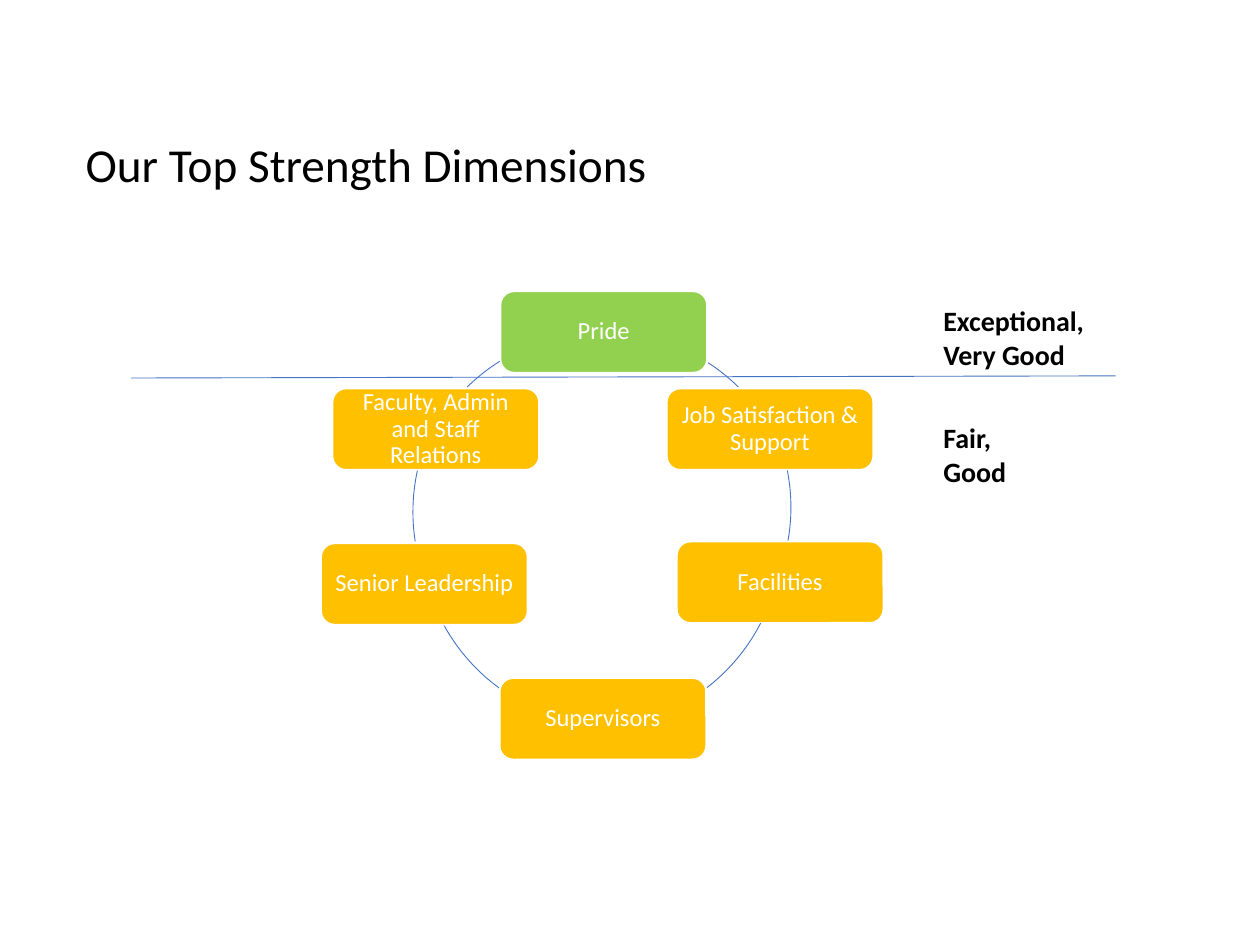
from dataclasses import dataclass
from lxml.etree import SubElement as Sub
from pptx import Presentation as Deck
from pptx.dml.color import RGBColor as RGB
from pptx.enum.shapes import MSO_CONNECTOR as Conn, MSO_SHAPE as Kind
from pptx.enum.text import MSO_ANCHOR as Anchor, MSO_AUTO_SIZE as Fit, PP_ALIGN as Align
from pptx.oxml.ns import qn
from pptx.util import Pt


@dataclass(frozen=True)
class Theme:
    font: str = "Calibri"
    ink: RGB = RGB(0, 0, 0)
    pale: RGB = RGB(255, 255, 255)
    green: RGB = RGB(0x92, 0xD0, 0x50)
    gold: RGB = RGB(0xFF, 0xC0, 0)
    blue: RGB = RGB(0x44, 0x72, 0xC4)
    head: int = 27
    note: int = 16
    node: int = 14
    thin: float = 0.5
    edge: float = 1


def put(item, form):
    for key, val in form.items():
        setattr(item, key, val)


class Board:
    """Draw styled elements on the current slide, with lengths in points."""

    def __init__(self, theme, slide):
        self.theme, self.slide = theme, slide

    def stroke(self, line, hue, wide):
        line.color.rgb = hue
        line.width = Pt(wide)

    def label(self, frame, lines, size, hue, bold=False, form=None):
        frame.text = "\n".join(lines)
        for para in frame.paragraphs:
            put(para, form or {})
            put(para.font, {"name": self.theme.font, "size": Pt(size), "bold": bold})
            para.font.color.rgb = hue

    def text(self, box, lines, size, bold=False, wrap=True):
        frame = self.slide.shapes.add_textbox(*map(Pt, box)).text_frame
        put(frame, {"word_wrap": wrap, "auto_size": Fit.SHAPE_TO_FIT_TEXT})
        self.label(frame, lines, size, self.theme.ink, bold)

    def shape(self, kind, box):
        item = self.slide.shapes.add_shape(kind, *map(Pt, box))
        item.shadow.inherit = False
        return item

    def node(self, box, name, fill):
        look = self.theme
        item = self.shape(Kind.ROUNDED_RECTANGLE, box)
        item.fill.solid()
        item.fill.fore_color.rgb = fill
        self.stroke(item.line, look.pale, look.edge)
        sides = ("left", "top", "right", "bottom")
        put(item.text_frame, {f"margin_{side}": Pt(4.2) for side in sides})
        put(item.text_frame, {"word_wrap": True, "vertical_anchor": Anchor.MIDDLE})
        form = {"alignment": Align.CENTER, "line_spacing": 0.9}
        self.label(item.text_frame, [name], look.node, look.pale, form=form)

    def arc(self, left, top, size, start, end):
        item = self.shape(Kind.ARC, (left, top, size, size))
        item.fill.background()
        for i, angle in enumerate((start, end)):
            item.adjustments[i] = angle * 0.6
        self.stroke(item.line, self.theme.blue, self.theme.thin)

    def rule(self, *ends):
        item = self.slide.shapes.add_connector(Conn.STRAIGHT, *map(Pt, ends))
        self.stroke(item.line, self.theme.blue, self.theme.thin)
        Sub(item._element.spPr, qn("a:effectLst"))


def main():
    deck = Deck()
    put(deck, {"slide_width": Pt(720), "slide_height": Pt(540)})
    look = Theme()
    board = Board(look, deck.slides.add_slide(deck.slide_layouts[6]))
    board.text((41.8, 74, 337.7, 40.3), ["Our Top Strength Dimensions"], look.head, wrap=False)

    wide, high, ring = 118, 46.5, 221
    nodes = [
        ("Pride", 286, 166.5, look.green),
        ("Job Satisfaction & Support", 381, 222, look.gold),
        ("Facilities", 386.8, 309.5, look.gold),
        ("Supervisors", 285.5, 387.5, look.gold),
        ("Senior Leadership", 183.5, 310.5, look.gold),
        ("Faculty, Admin and Staff Relations", 190, 222, look.gold),
    ]
    arcs = [
        (234, 189.5, 303, 314.5),
        (231, 179.5, 349, 10),
        (226, 195, 27.3, 52.4),
        (240, 193.5, 126.2, 151.3),
        (236, 182, 171.2, 192.5),
        (234, 189.5, 225.5, 237.8),
    ]
    for (name, left, top, fill), (x, y, start, end) in zip(nodes, arcs):
        board.node((left, top, wide, high), name, fill)
        board.arc(x, y, ring, start, end)

    board.text((532, 170, 138, 46), ["Exceptional,", "Very Good"], look.note, bold=True)
    board.rule(75, 216, 637.5, 214.8)
    board.text((532, 237, 79, 46), ["Fair, Good"], look.note, bold=True)
    deck.save("out.pptx")


if __name__ == "__main__":
    main()
